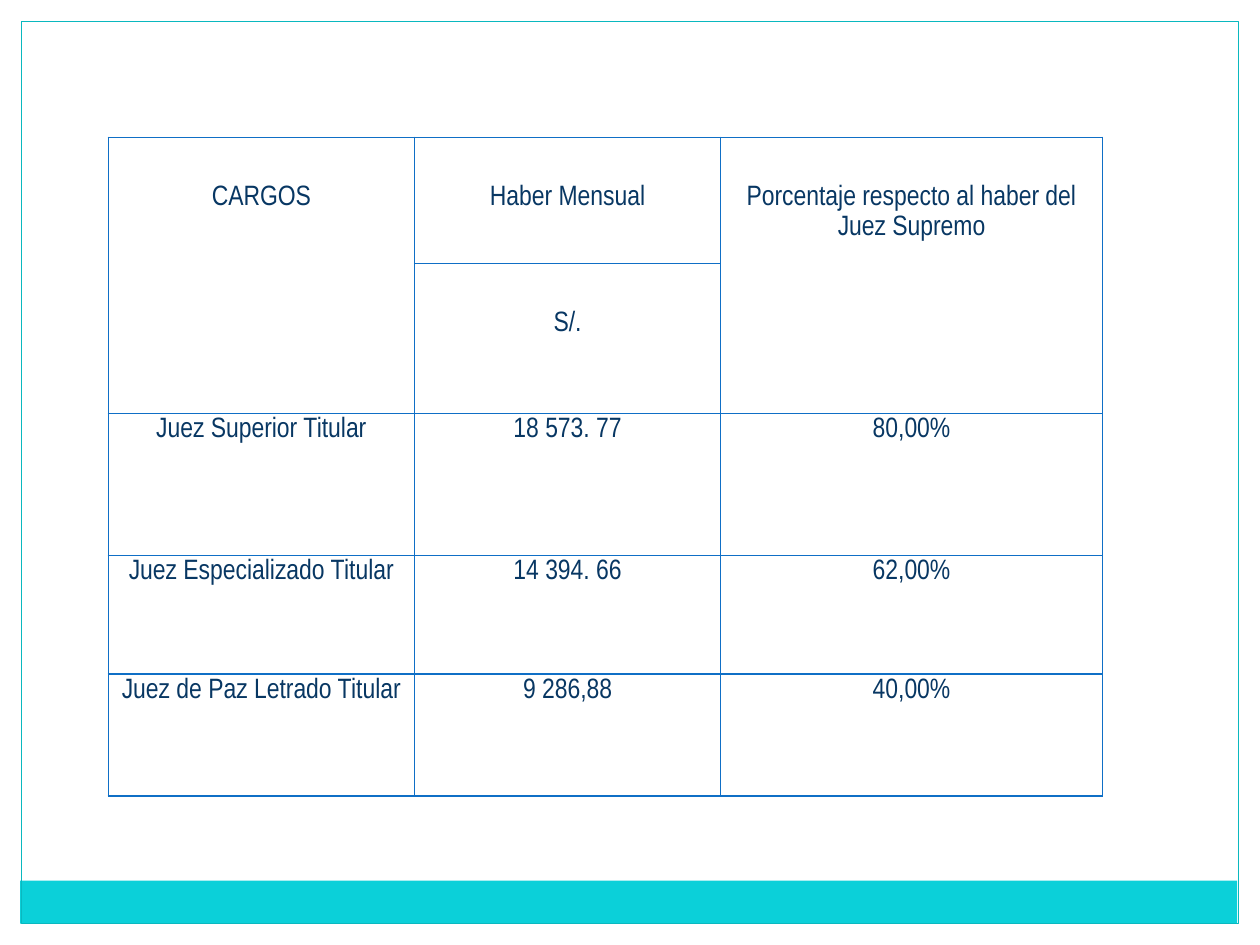
from lxml.etree import SubElement
from pptx import Presentation
from pptx.dml.color import RGBColor
from pptx.enum.shapes import MSO_SHAPE as Shape
from pptx.enum.text import PP_ALIGN as Align
from pptx.oxml.ns import qn
from pptx.util import Inches, Pt

THEME = {
    "white": "FFFFFF", "band": "0BD0D9", "frame": "0AB8BF",
    "grid": "0F6FC6", "text": "083763",
    "font": "Arial Narrow", "size": 16, "frame_width": 0.75, "grid_width": 1,
}
SLIDE_SIZE = (10, 7.5)
PANELS = [
    ((0, 0, 10, 0.17), "white", None),
    ((9.83, 0, 0.17, 7.5), "white", None),
    ((0, 0, 0.17, 7.5), "white", None),
    ((0.16, 6.99, 9.66, 0.34), "band", None),
    ((0.17, 0.17, 9.66, 7.16), None, "frame"),
]
TABLE_ORIGIN = (0.86, 1.09)
COLUMN_WIDTHS = [2.43, 2.43, 3.03]
ROW_HEIGHTS = [1, 1.19, 1.13, 0.94, 0.97]
HEADER_ROWS = 2
HEADER_TOP = 0.35
MERGED_COLUMNS = [0, 2]
ROWS = [
    ("CARGOS", "Haber Mensual", "Porcentaje respecto al haber del Juez Supremo"),
    ("", "S/.", ""),
    ("Juez Superior Titular", "18 573. 77", "80,00%"),
    ("Juez Especializado Titular", "14 394. 66", "62,00%"),
    ("Juez de Paz Letrado Titular", "9 286,88", "40,00%"),
]


def color(name):
    """Return a theme colour."""
    return RGBColor.from_string(THEME[name])


def set_attributes(target, values):
    """Set every attribute named in values."""
    for name, value in values.items():
        setattr(target, name, value)


def add_panel(slide, box, fill, line):
    """Add a rectangle with an optional fill and outline."""
    shape = slide.shapes.add_shape(Shape.RECTANGLE, *map(Inches, box))
    shape.shadow.inherit = False
    if fill:
        shape.fill.solid()
        shape.fill.fore_color.rgb = color(fill)
    else:
        shape.fill.background()
    if line:
        shape.line.color.rgb = color(line)
        shape.line.width = Pt(THEME["frame_width"])
    else:
        shape.line.fill.background()


def add_borders(cell):
    """Draw the grid line on all four sides of a cell."""
    properties = cell._tc.get_or_add_tcPr()
    for side in ("a:lnL", "a:lnR", "a:lnT", "a:lnB"):
        line = SubElement(properties, qn(side), w=str(Pt(THEME["grid_width"])))
        fill = SubElement(line, qn("a:solidFill"))
        SubElement(fill, qn("a:srgbClr"), val=THEME["grid"])


def format_cell(cell, text, top):
    """Write and format one table cell."""
    add_borders(cell)
    cell.fill.background()
    set_attributes(cell, {
        "margin_left": Inches(0.05), "margin_right": Inches(0.05),
        "margin_top": Inches(top), "margin_bottom": 0,
    })
    paragraph = cell.text_frame.paragraphs[0]
    set_attributes(paragraph, {
        "alignment": Align.CENTER, "line_spacing": 1.15, "space_after": Pt(10),
    })
    paragraph.font.size = Pt(THEME["size"])
    if text:
        run = paragraph.add_run()
        run.text = text
        set_attributes(run.font, {
            "name": THEME["font"], "size": Pt(THEME["size"]), "bold": False,
        })
        run.font.color.rgb = color("text")


def add_salary_table(slide):
    """Add the table of posts, monthly pay and percentages."""
    box = (*TABLE_ORIGIN, sum(COLUMN_WIDTHS), sum(ROW_HEIGHTS))
    table = slide.shapes.add_table(
        len(ROWS), len(COLUMN_WIDTHS), *map(Inches, box)).table
    set_attributes(table, {"first_row": False, "horz_banding": False})
    for column, width in zip(table.columns, COLUMN_WIDTHS):
        column.width = Inches(width)
    for row, height in zip(table.rows, ROW_HEIGHTS):
        row.height = Inches(height)
    for row_index, texts in enumerate(ROWS):
        top = HEADER_TOP if row_index < HEADER_ROWS else 0
        for column_index, text in enumerate(texts):
            format_cell(table.cell(row_index, column_index), text, top)
    for column_index in MERGED_COLUMNS:
        table.cell(0, column_index).merge(
            table.cell(HEADER_ROWS - 1, column_index))


def main():
    """Build and save the slide."""
    presentation = Presentation()
    width, height = map(Inches, SLIDE_SIZE)
    set_attributes(presentation, {"slide_width": width, "slide_height": height})
    slide = presentation.slides.add_slide(presentation.slide_layouts[6])
    slide.background.fill.solid()
    slide.background.fill.fore_color.rgb = color("white")
    for panel in PANELS:
        add_panel(slide, *panel)
    add_salary_table(slide)
    presentation.save("out.pptx")


if __name__ == "__main__":
    main()
